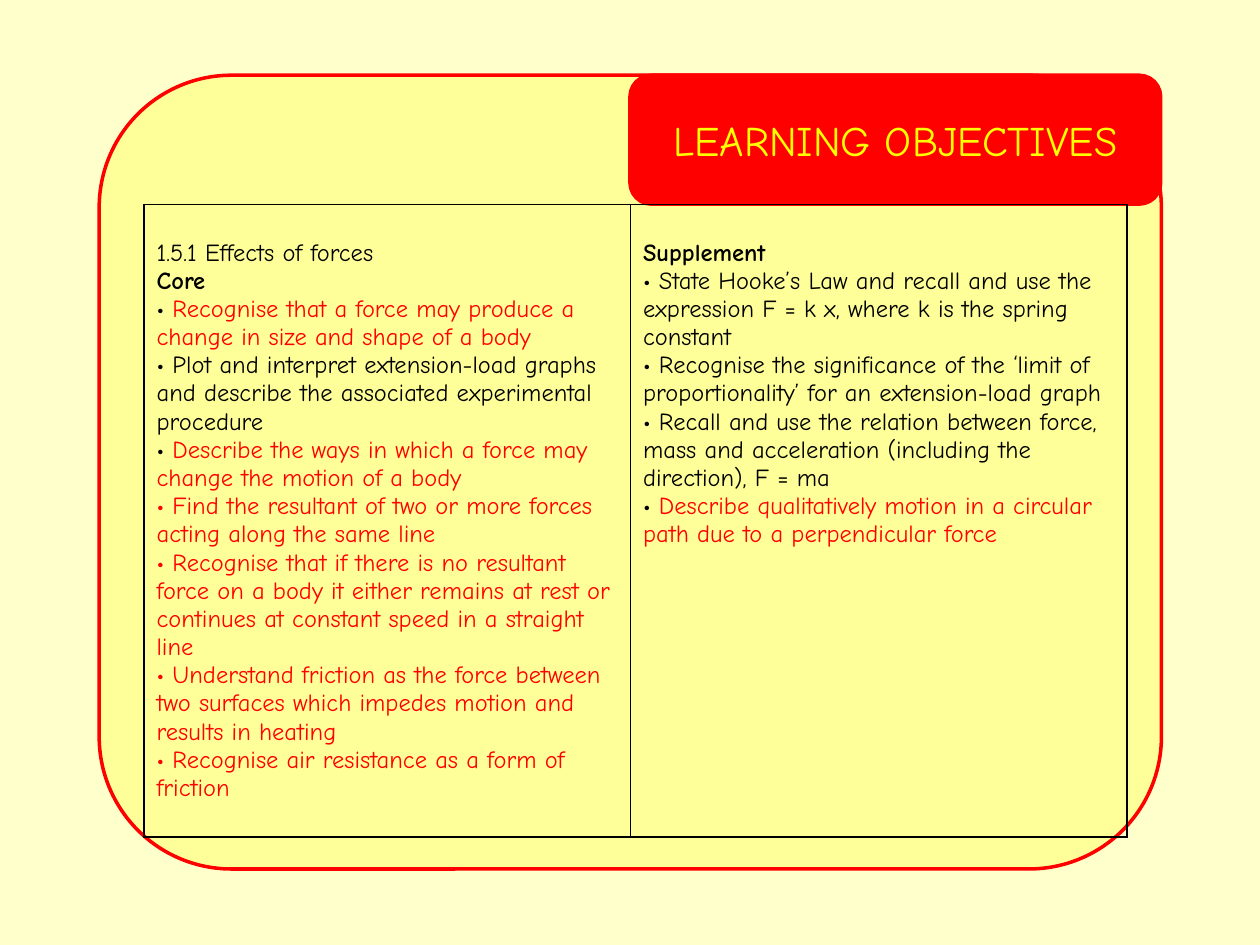
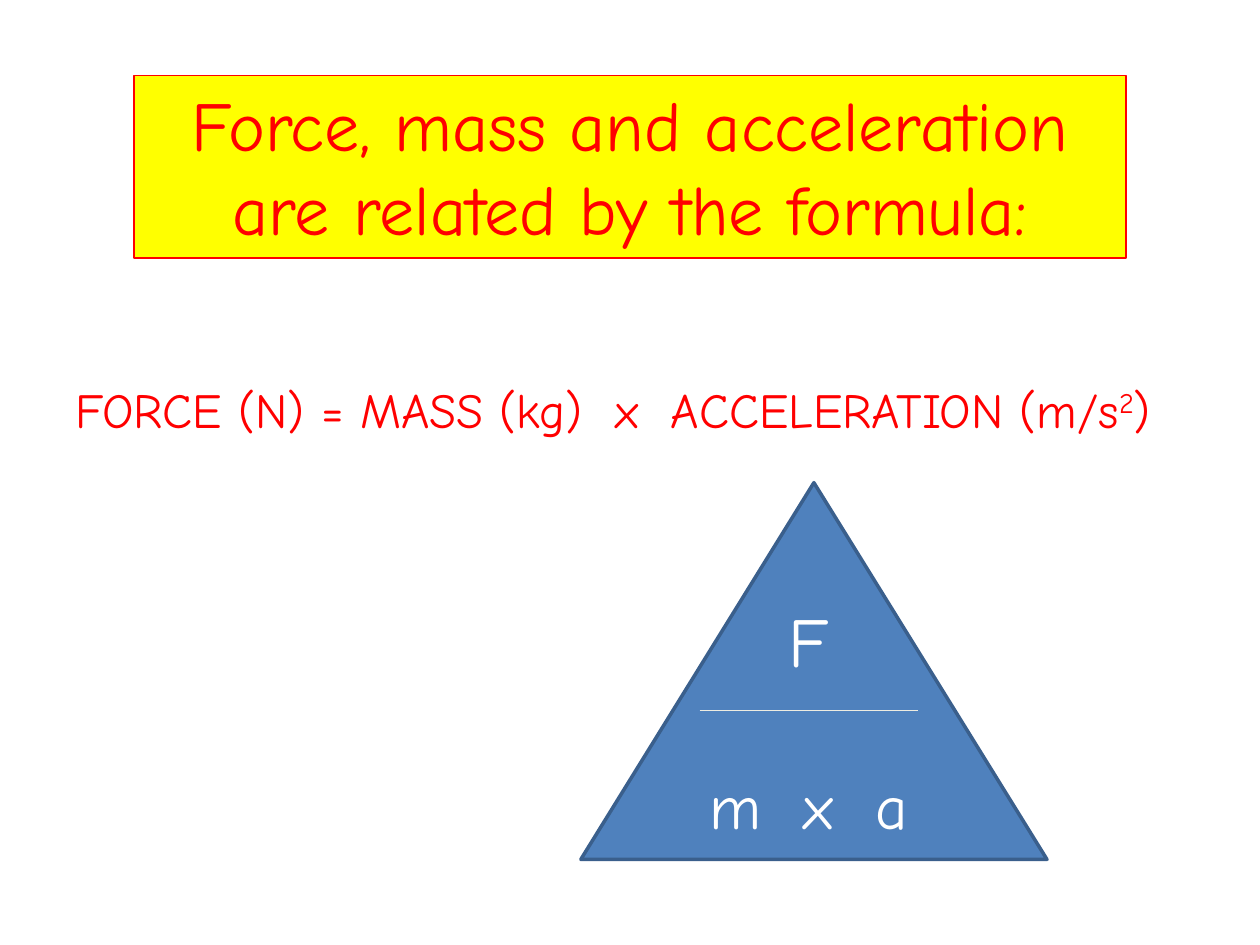
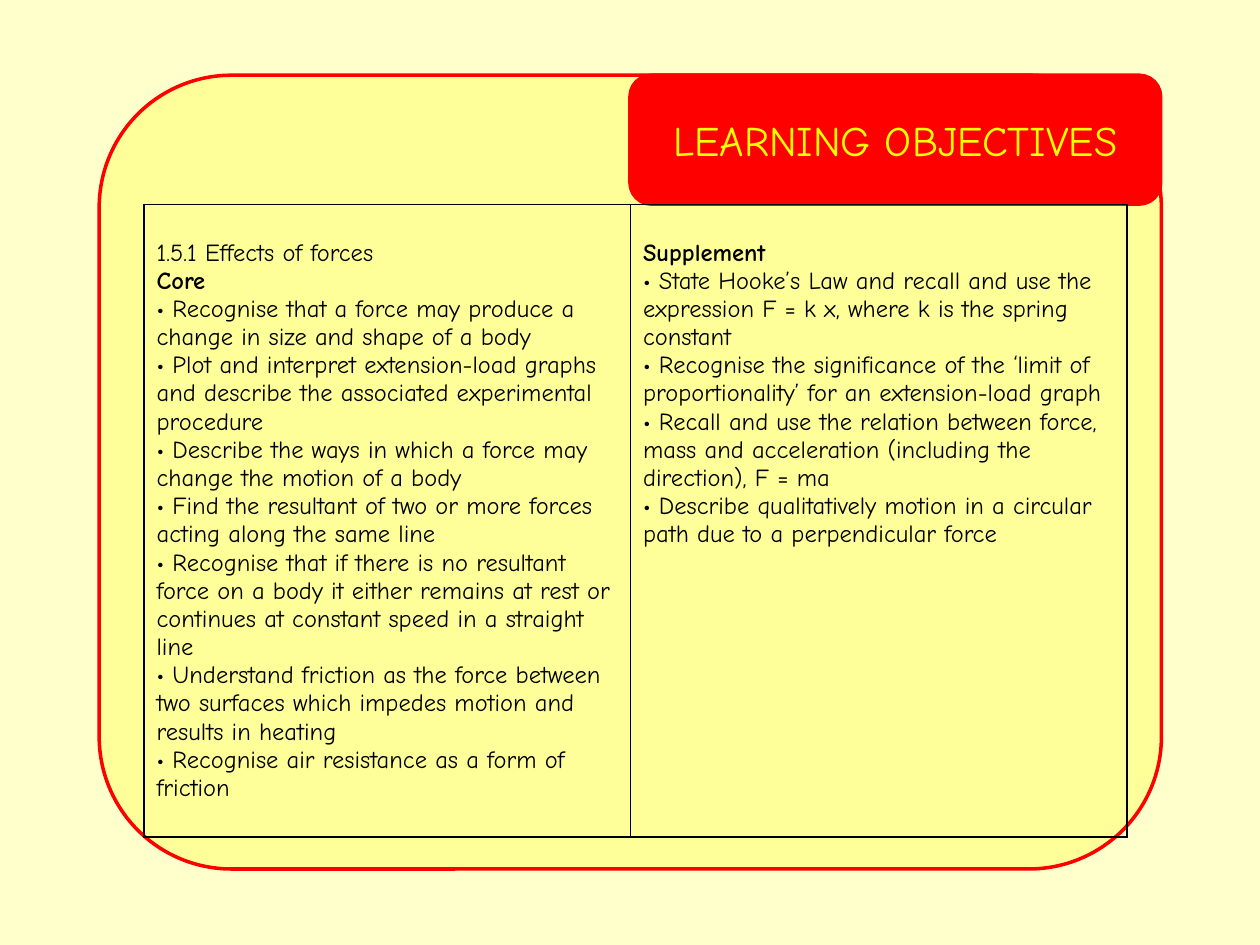
from lxml.etree import SubElement
from pptx import Presentation
from pptx.dml.color import RGBColor
from pptx.enum.shapes import MSO_CONNECTOR, MSO_SHAPE
from pptx.enum.text import MSO_ANCHOR, PP_ALIGN
from pptx.oxml.ns import qn
from pptx.util import Pt

FONT = "Comic Neue"
RED, YELLOW, BLACK, WHITE = "FF0000", "FFFF00", "000000", "FFFFFF"
CREAM, PALE_YELLOW = "FFFFCC", "FFFF99"
BLUE, DARK_BLUE, IVORY = "4F81BD", "3A5F8C", "EEECE1"
SLIDE_WIDTH, SLIDE_HEIGHT = 720, 540


def write_text(frame, paragraphs, align=PP_ALIGN.LEFT, anchor=MSO_ANCHOR.TOP, **text_format):
    """Fill a text frame; each paragraph is a list of (text, format changes) runs."""
    frame.word_wrap = True
    frame.vertical_anchor = anchor
    for index, runs in enumerate(paragraphs):
        paragraph = frame.add_paragraph() if index else frame.paragraphs[0]
        paragraph.alignment = align
        for text, changes in runs:
            style = {**text_format, **changes}
            run = paragraph.add_run()
            run.text = text
            run.font.name = FONT
            run.font.size = Pt(style["size"])
            run.font.bold = style.get("bold", False)
            run.font.color.rgb = RGBColor.from_string(style["color"])
            if "baseline" in style:
                run.font._element.set("baseline", str(style["baseline"]))


def add_panel(slide, kind, box, fill, line=None, line_width=2):
    shape = slide.shapes.add_shape(kind, *map(Pt, box))
    shape.shadow.inherit = False
    shape.fill.solid()
    shape.fill.fore_color.rgb = RGBColor.from_string(fill)
    if line:
        shape.line.color.rgb = RGBColor.from_string(line)
        shape.line.width = Pt(line_width)
    else:
        shape.line.fill.background()
    return shape


presentation = Presentation()
presentation.slide_width = Pt(SLIDE_WIDTH)
presentation.slide_height = Pt(SLIDE_HEIGHT)
blank_layout = presentation.slide_layouts[6]
objectives_slide, formula_slide, review_slide = [
    presentation.slides.add_slide(blank_layout) for _ in range(3)
]

# Learning objectives: (text, is the text highlighted, is its bullet highlighted)
core = [
    ("Recognise that a force may produce a change in size and shape of a body", True, False),
    ("Plot and interpret extension-load graphs and describe the associated "
     "experimental procedure", False, False),
    ("Describe the ways in which a force may change the motion of a body", True, False),
    ("Find the resultant of two or more forces acting along the same line", True, True),
    ("Recognise that if there is no resultant force on a body it either remains at rest "
     "or continues at constant speed in a straight line", True, True),
    ("Understand friction as the force between two surfaces which impedes motion and "
     "results in heating", True, True),
    ("Recognise air resistance as a form of friction", True, True),
]
supplement = [
    ("State Hooke’s Law and recall and use the expression F = k x, where k is the "
     "spring constant", False, False),
    ("Recognise the significance of the ‘limit of proportionality’ for an "
     "extension-load graph", False, False),
    ("Recall and use the relation between force, mass and acceleration (including the "
     "direction), F = ma", False, False),
    ("Describe qualitatively motion in a circular path due to a perpendicular force",
     True, False),
]
columns = [
    (278, [[("1.5.1 Effects of forces", {})], [("Core", {"bold": True})]], core),
    (283.6, [[("Supplement", {"bold": True})]], supplement),
]

for slide, highlight in ((objectives_slide, RED), (review_slide, BLACK)):
    add_panel(slide, MSO_SHAPE.RECTANGLE, (0, 0, SLIDE_WIDTH, SLIDE_HEIGHT), CREAM)
    add_panel(slide, MSO_SHAPE.ROUNDED_RECTANGLE, (56.7, 43, 607, 453.6), PALE_YELLOW, RED)
    title = add_panel(slide, MSO_SHAPE.ROUNDED_RECTANGLE, (360, 43, 303.3, 73.7), RED, RED)
    write_text(title.text_frame, [[("LEARNING OBJECTIVES", {})]], size=24, color=YELLOW,
               align=PP_ALIGN.CENTER, anchor=MSO_ANCHOR.MIDDLE)

    table = slide.shapes.add_table(
        1, 2, Pt(82.3), Pt(116.9), Pt(561.6), Pt(361.5)).table
    table.first_row = table.horz_banding = False
    for index, (width, headings, objectives) in enumerate(columns):
        table.columns[index].width = Pt(width)
        cell = table.cell(0, index)
        cell.margin_top = Pt(19.7)
        paragraphs = headings + [
            [("• ", {"color": highlight if bullet_marked else BLACK}),
             (text, {"color": highlight if text_marked else BLACK})]
            for text, text_marked, bullet_marked in objectives
        ]
        write_text(cell.text_frame, paragraphs, size=14, color=BLACK)
        properties = cell._tc.get_or_add_tcPr()
        for side in ("a:lnL", "a:lnR", "a:lnT", "a:lnB"):
            border = SubElement(properties, qn(side), w=str(Pt(1)))
            border_fill = SubElement(border, qn("a:solidFill"))
            SubElement(border_fill, qn("a:srgbClr"), val=BLACK)
        cell.fill.background()

# Formula and its triangle
heading = add_panel(formula_slide, MSO_SHAPE.RECTANGLE, (76.5, 43, 567, 104.4),
                    YELLOW, RED, 0.75)
write_text(heading.text_frame,
           [[("Force, mass and acceleration are related by the formula:", {})]],
           size=40, color=RED, align=PP_ALIGN.CENTER)
add_panel(formula_slide, MSO_SHAPE.ISOSCELES_TRIANGLE, (331.9, 275.8, 266.4, 215.3),
          BLUE, DARK_BLUE)

divider = formula_slide.shapes.add_connector(
    MSO_CONNECTOR.STRAIGHT, Pt(399.8), Pt(406), Pt(524.3), Pt(406))
divider.line.color.rgb = RGBColor.from_string(IVORY)
divider.line.width = Pt(0.75)
SubElement(divider._element.spPr, qn("a:effectLst"))

formula = [("FORCE (N) = MASS (kg)  x  ACCELERATION (m/s", {}), ("2", {"baseline": 30000}),
           (")", {})]
for box, runs, size, color in (
    ((0, 213.1, 700.6, 41), formula, 28, RED),
    ((433.4, 337.7, 56.9, 55.4), [("F", {})], 40, WHITE),
    ((377.3, 434.2, 169.9, 51.1), [("m  x  a", {})], 36, WHITE),
):
    label = formula_slide.shapes.add_textbox(*map(Pt, box))
    write_text(label.text_frame, [runs], size=size, color=color, align=PP_ALIGN.CENTER)

presentation.save("out.pptx")
